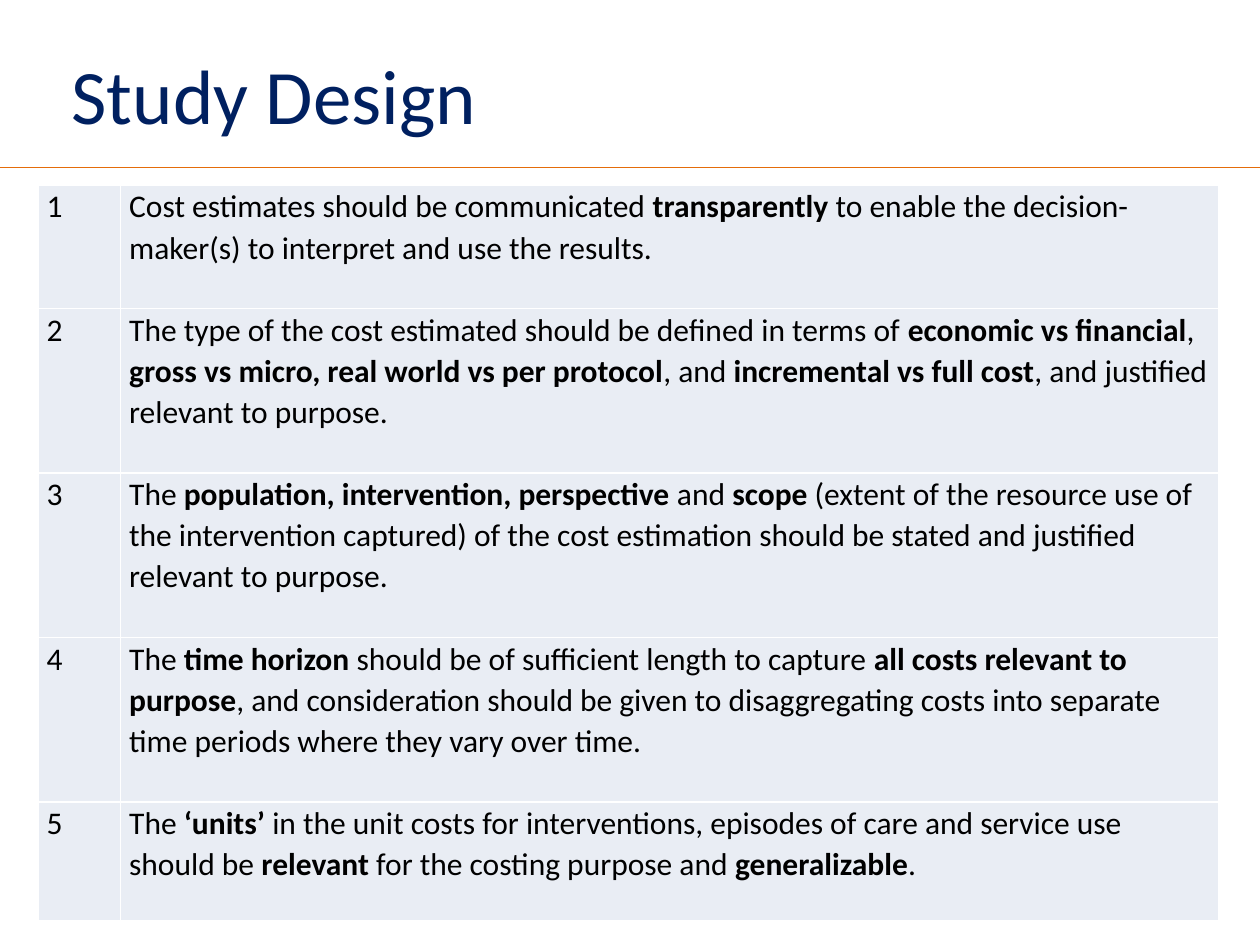
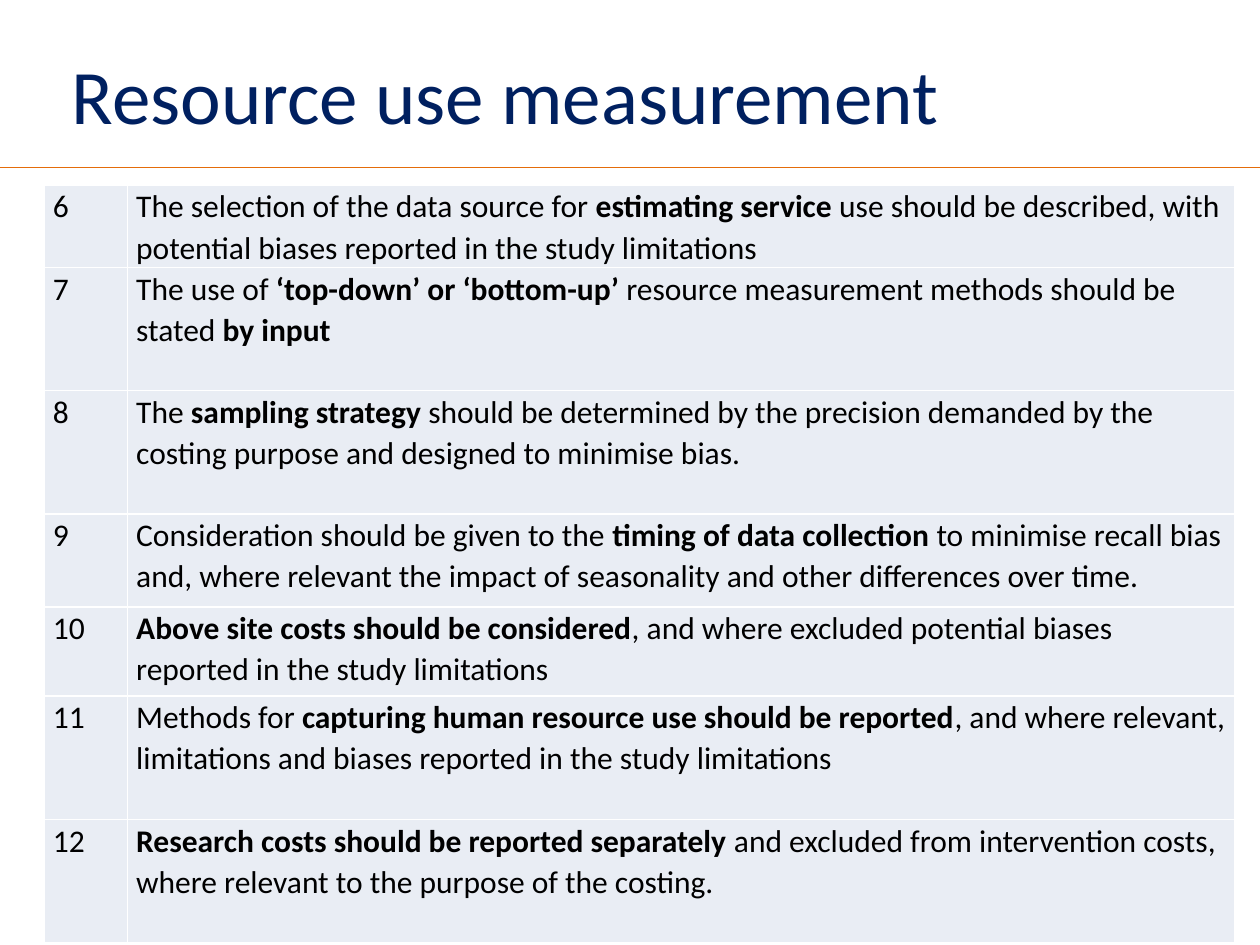
"""Build two slides of numbered costing principles."""
from lxml import etree
from pptx import Presentation
from pptx import util as u
from pptx.dml.color import RGBColor
from pptx.enum import shapes, text
from pptx.oxml import ns

NAVY = RGBColor(0x00, 0x20, 0x60)
ORANGE = RGBColor(0xE4, 0x6C, 0x0A)
PALE = RGBColor(0xE9, 0xED, 0xF4)
BLACK = RGBColor(0, 0, 0)

WIDTH, HEIGHT = u.Inches(10), u.Inches(7.5)
FONT = "Calibri"
BODY_SIZE, TITLE_SIZE = 18, 44
LINE_SPACING = 1.07
TEXT_LINE = u.Pt(BODY_SIZE * 1.22 * LINE_SPACING)
RULE_TOP = u.Inches(1.33)
TABLE_TOP = u.Inches(1.47)
NUMBER_SHARE = 0.07

TITLE_FRAME = {
    "word_wrap": True,
    "vertical_anchor": text.MSO_ANCHOR.MIDDLE,
    "margin_bottom": u.Inches(0.18),
}
CELL_FORMAT = {
    "margin_left": u.Inches(0.07),
    "margin_right": u.Inches(0.07),
    "margin_top": 0,
    "margin_bottom": 0,
    "vertical_anchor": text.MSO_ANCHOR.TOP,
}
TABLE_FORMAT = {"first_row": False, "horz_banding": False}

# Each principle is its row height in text lines and its wording, bold between asterisks.
STUDY_DESIGN = [
    (3, "Cost estimates should be communicated *transparently* to enable the "
        "decision-maker(s) to interpret and use the results."),
    (4, "The type of the cost estimated should be defined in terms of *economic vs "
        "financial*, *gross vs micro, real world vs per protocol*, and *incremental vs "
        "full cost*, and justified relevant to purpose."),
    (4, "The *population, intervention, perspective *and *scope* (extent of the resource "
        "use of the intervention captured) of the cost estimation should be stated and "
        "justified relevant to purpose."),
    (4, "The *time horizon *should be of sufficient length to capture *all costs relevant "
        "to purpose*, and consideration should be given to disaggregating costs into "
        "separate time periods where they vary over time."),
    (2.9, "The *‘units’ *in the unit costs for interventions, episodes of care and service "
          "use should be *relevant* for the costing purpose and *generalizable*."),
]
RESOURCE_USE = [
    (2, "The selection of the data source for *estimating service* use should be "
        "described, with potential biases reported in the study limitations"),
    (3, "The use of *‘top-down’ or ‘bottom-up’* resource measurement methods should be "
        "stated *by input*"),
    (3, "The *sampling strategy *should be determined by the precision demanded by the "
        "costing purpose and designed to minimise bias."),
    (2.26, "Consideration should be given to the *timing of data collection *to minimise "
           "recall bias and, where relevant the impact of seasonality and other "
           "differences over time."),
    (2.17, "*Above site costs should be considered*, and where excluded potential biases "
           "reported in the study limitations"),
    (3, "Methods for *capturing human resource use should be reported*, and where "
        "relevant, limitations and biases reported in the study limitations"),
    (3, "*Research costs should be reported separately *and excluded from intervention "
        "costs, where relevant to the purpose of the costing."),
]


def apply_format(target, values):
    """Set each named attribute on the target."""
    for name, value in values.items():
        setattr(target, name, value)


def write_text(paragraph, wording, size, color):
    """Write wording as runs, bold between asterisks."""
    for index, part in enumerate(wording.split("*")):
        if part:
            run = paragraph.add_run()
            run.text = part
            apply_format(run.font, {"name": FONT, "size": u.Pt(size), "bold": index % 2 == 1})
            run.font.color.rgb = color


def add_title(slide, wording):
    """Add the slide title above the rule."""
    box = slide.shapes.add_textbox(u.Inches(0.47), u.Inches(0.29), u.Inches(9.03), u.Inches(1.04))
    apply_format(box.text_frame, TITLE_FRAME)
    write_text(box.text_frame.paragraphs[0], wording, TITLE_SIZE, NAVY)


def add_rule(slide):
    """Draw the full-width line under the title."""
    rule = slide.shapes.add_connector(
        shapes.MSO_CONNECTOR.STRAIGHT, 0, RULE_TOP, WIDTH, RULE_TOP)
    rule.line.color.rgb = ORANGE
    rule.line.width = u.Pt(1)
    etree.SubElement(rule.element.spPr, ns.qn("a:effectLst"))


def fill_cell(cell, wording):
    """Format one table cell and write its text."""
    apply_format(cell, CELL_FORMAT)
    cell.fill.solid()
    cell.fill.fore_color.rgb = PALE
    paragraph = cell.text_frame.paragraphs[0]
    paragraph.line_spacing = LINE_SPACING
    write_text(paragraph, wording, BODY_SIZE, BLACK)


def add_principles(slide, principles, first_number, left, width):
    """Add the table of numbered principles."""
    heights = [round(lines * TEXT_LINE) for lines, _ in principles]
    table = slide.shapes.add_table(
        len(principles), 2, left, TABLE_TOP, width, sum(heights)).table
    apply_format(table, TABLE_FORMAT)
    number_width = round(width * NUMBER_SHARE)
    table.columns[0].width = number_width
    table.columns[1].width = width - number_width
    for index, (_, wording) in enumerate(principles):
        table.rows[index].height = heights[index]
        fill_cell(table.cell(index, 0), str(first_number + index))
        fill_cell(table.cell(index, 1), wording)


def main():
    """Build and save the presentation."""
    presentation = Presentation()
    apply_format(presentation, {"slide_width": WIDTH, "slide_height": HEIGHT})
    first_number = 1
    for title, principles, left, width in (
        ("Study Design", STUDY_DESIGN, 0.3, 9.37),
        ("Resource use measurement", RESOURCE_USE, 0.35, 9.45),
    ):
        slide = presentation.slides.add_slide(presentation.slide_layouts[6])
        add_rule(slide)
        add_title(slide, title)
        add_principles(slide, principles, first_number, u.Inches(left), u.Inches(width))
        first_number += len(principles)
    presentation.save("out.pptx")


if __name__ == "__main__":
    main()
